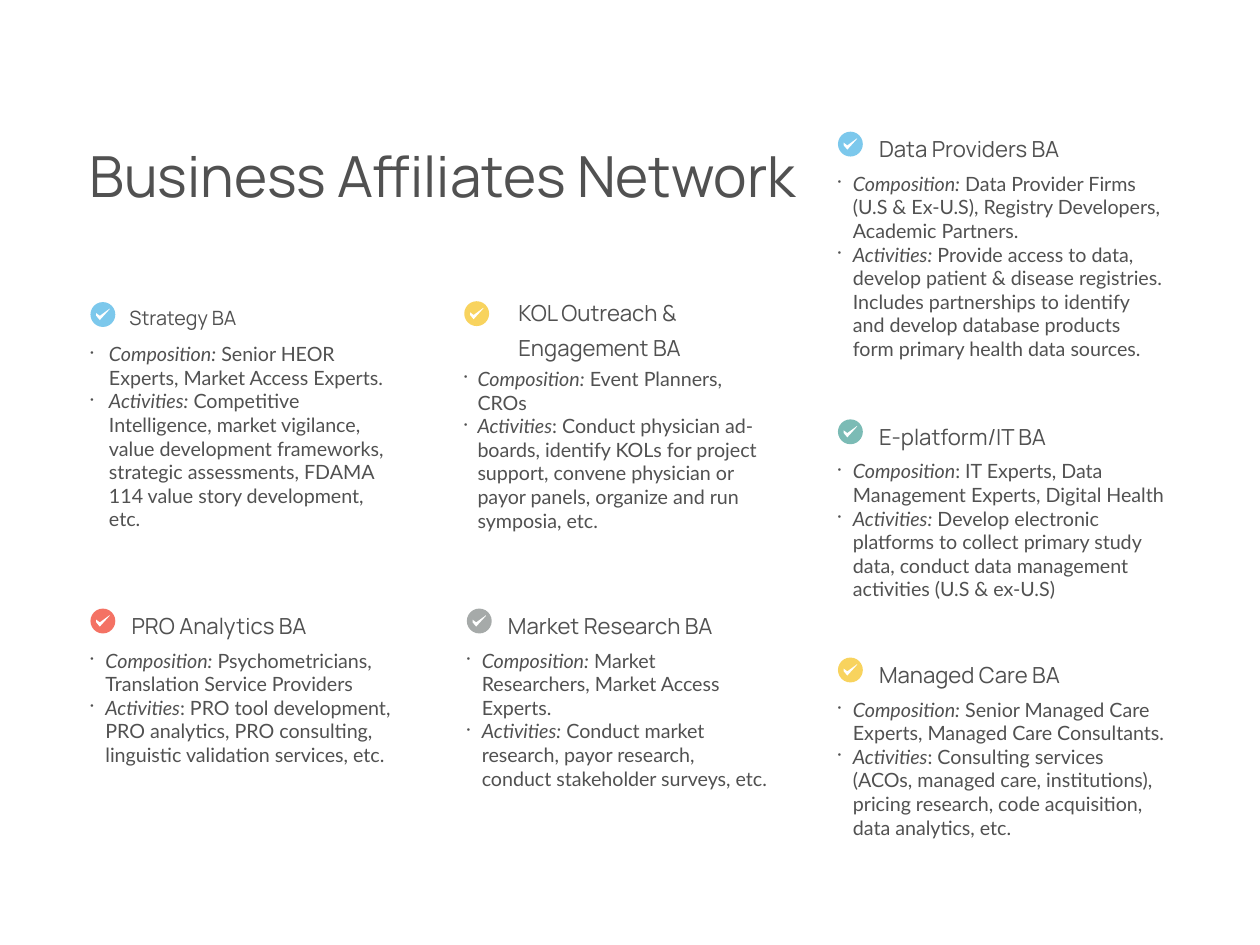
from dataclasses import dataclass

from lxml.etree import SubElement
from pptx import Presentation
from pptx.dml.color import RGBColor as Color
from pptx.enum.shapes import MSO_SHAPE as Preset
from pptx.enum.text import MSO_ANCHOR as Anchor, MSO_AUTO_SIZE as Fit
from pptx.oxml.ns import qn
from pptx.util import Pt


@dataclass(frozen=True)
class Theme:
    ink: str = "515151"
    white: str = "FFFFFF"
    blue: str = "7CC8EC"
    teal: str = "7BBBB5"
    gold: str = "F8D35E"
    red: str = "F47264"
    gray: str = "A6AAA9"
    head: str = "Manrope"
    body: str = "Lato"
    big: int = 46
    mid: int = 18
    small: int = 16


T = Theme()
DOT = 20.2
TICK = [(0, 5.8), (2.9, 9.2), (10.8, 0.5), (10.8, 0), (2.9, 5.8), (0, 3.6)]
LEFT, CENTER, RIGHT = 73.5, 379.4, 681

# Each card: left, top, colour, title, composition, activities, other settings
CARDS = [
    (CENTER, 494.6, T.gray, "Market Research BA",
     ("Composition:", " Market Researchers, Market Access Experts."),
     ("Activities:", " Conduct market research, payor research, "
      "conduct stakeholder surveys, etc."), {}),
    (LEFT, 494.6, T.red, "PRO Analytics BA",
     ("Composition:", " Psychometricians, Translation Service Providers"),
     ("Activities", ": PRO tool development, PRO analytics, PRO consulting, "
      "linguistic validation services, etc."), {}),
    (RIGHT, 107, T.blue, "Data Providers BA",
     ("Composition:", " Data Provider Firms (U.S & Ex-U.S), "
      "Registry Developers, Academic Partners."),
     ("Activities:", " Provide access to data, develop patient & disease "
      "registries. Includes partnerships to identify and develop database "
      "products form primary health data sources."), {"width": 266.4}),
    (RIGHT, 340.8, T.teal, "E-platform/IT BA",
     ("Composition", ": IT Experts, Data Management Experts, Digital Health"),
     ("Activities:", " Develop electronic platforms to collect primary study "
      "data, conduct data management activities (U.S & ex-U.S)"),
     {"width": 266.4}),
    (377.3, 244.8, T.gold, "KOL Outreach & Engagement BA",
     ("Composition:", " Event Planners, CROs"),
     ("Activities", ": Conduct physician ad-boards, identify KOLs for project "
      "support, convene physician or payor panels, organize and run "
      "symposia, etc."),
     {"shift": 41.8, "lift": 5.8, "tall": 52.6, "drop": 53.3, "indent": 10.8}),
    (RIGHT, 534.4, T.gold, "Managed Care BA",
     ("Composition:", " Senior Managed Care Experts, "
      "Managed Care Consultants."),
     ("Activities", ": Consulting services (ACOs, managed care, institutions), "
      "pricing research, code acquisition, data analytics, etc."),
     {"width": 266.4}),
    (LEFT, 245.5, T.blue, "Strategy BA",
     ("Composition:", " Senior HEOR Experts, Market Access Experts."),
     ("Activities:", " Competitive Intelligence, market vigilance, value "
      "development frameworks, strategic assessments, FDAMA 114 value story "
      "development, etc."),
     {"shift": 29.5, "lift": 1.4, "tall": 23, "size": T.small,
      "indent": 15.1}),
]


def paint(shape, color):
    shape.shadow.inherit = False
    shape.fill.solid()
    shape.fill.fore_color.rgb = Color.from_string(color)
    shape.line.fill.background()


def bullet(para, indent):
    """Hang the paragraph behind a half-size dot."""
    props = para._p.get_or_add_pPr()
    props.set("marL", str(Pt(indent)))
    props.set("indent", str(-Pt(indent)))
    SubElement(props, qn("a:buSzPct")).set("val", "50000")
    SubElement(props, qn("a:buChar")).set("char", "•")


def write(slide, text, box, *, font=T.head, size=T.mid, inset=2.2,
          anchor=Anchor.MIDDLE, space=1.3, indent=0):
    """Add text; each paragraph is a list of (words, italic) runs."""
    frame = slide.shapes.add_textbox(*map(Pt, box)).text_frame
    frame.word_wrap = True
    frame.auto_size = Fit.SHAPE_TO_FIT_TEXT
    frame.vertical_anchor = anchor
    frame.margin_left = frame.margin_right = Pt(inset)
    frame.margin_top = frame.margin_bottom = Pt(inset)
    for i, runs in enumerate(text):
        para = frame.add_paragraph() if i else frame.paragraphs[0]
        if indent:
            bullet(para, indent)
        if space:
            para.line_spacing = space
        for words, italic in runs:
            run = para.add_run()
            run.text = words
            run.font.name = font
            run.font.size = Pt(size)
            run.font.italic = italic
            run.font.color.rgb = Color.from_string(T.ink)


def badge(slide, x, y, color):
    """Add a round dot with a white tick."""
    dot = slide.shapes.add_shape(Preset.OVAL, Pt(x), Pt(y), Pt(DOT), Pt(DOT))
    paint(dot, color)
    start, *rest = [(Pt(x + 4.7 + dx), Pt(y + 5.4 + dy)) for dx, dy in TICK]
    pen = slide.shapes.build_freeform(*start)
    pen.add_line_segments(rest, close=True)
    paint(pen.convert_to_shape(), T.white)


def card(slide, x, y, color, title, made, does, *, width=244.8, shift=31.2,
         lift=2.1, tall=25.2, drop=32.4, size=T.mid, indent=12.2):
    badge(slide, x, y, color)
    write(slide, [[(title, False)]], (x + shift, y - lift, 188, tall),
          size=size)
    facts = [[(label, True), (rest, False)] for label, rest in (made, does)]
    write(slide, facts, (x, y + drop, width, 120), font=T.body, size=T.small,
          inset=0, anchor=Anchor.TOP, space=None, indent=indent)


def main():
    deck = Presentation()
    deck.slide_width, deck.slide_height = Pt(1024), Pt(768)
    slide = deck.slides.add_slide(deck.slide_layouts[6])
    write(slide, [[("Business Affiliates Network", False)]],
          (70.6, 105, 628.6, 58.3), size=T.big)
    for *parts, extra in CARDS:
        card(slide, *parts, **extra)
    deck.save("out.pptx")


if __name__ == "__main__":
    main()
